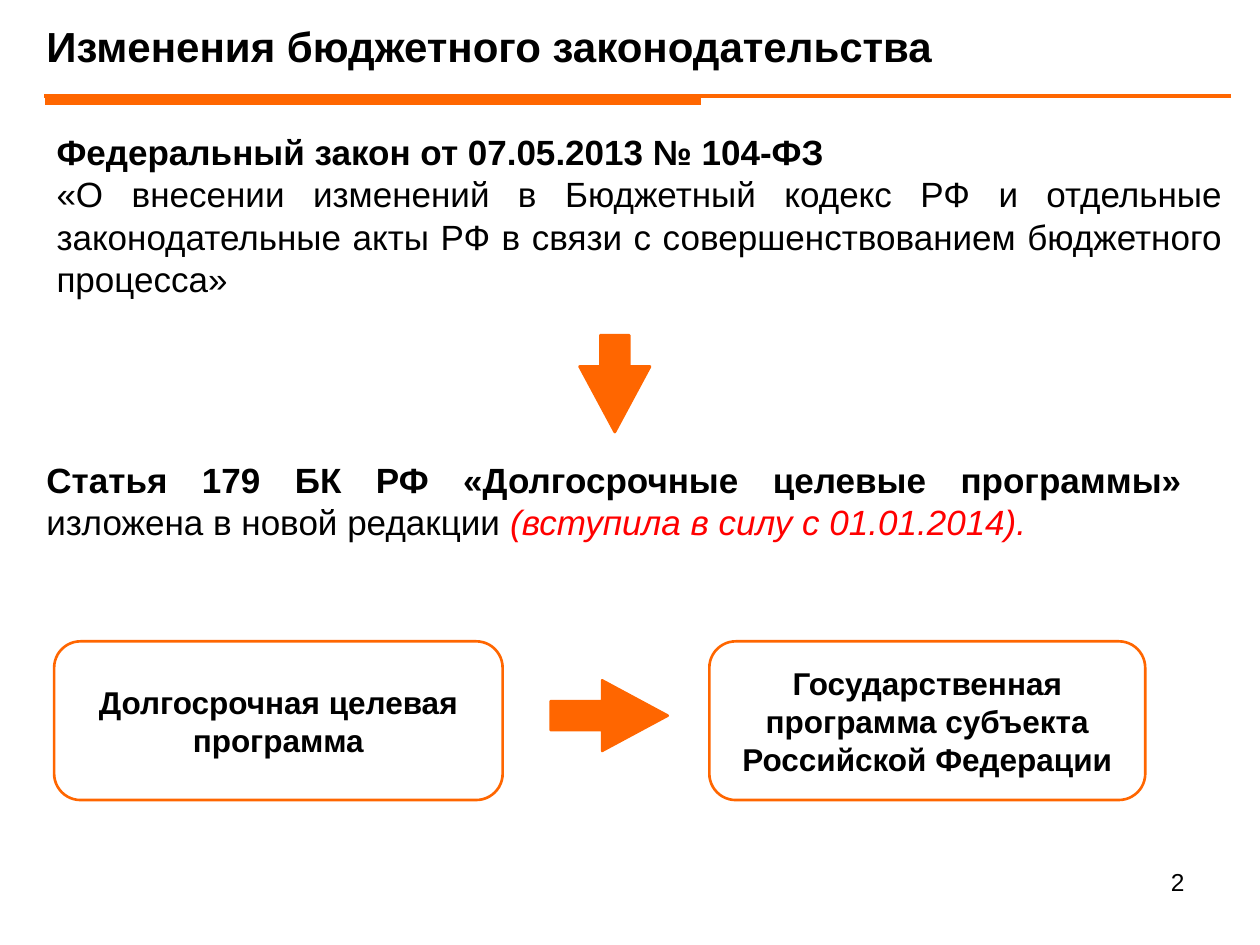
import pptx
import pptx.util
import pptx.dml.color
import pptx.enum.shapes
import pptx.enum.text
import pptx.oxml.ns
from lxml import etree

Inches = pptx.util.Inches
Pt = pptx.util.Pt
SHAPE = pptx.enum.shapes.MSO_SHAPE
ALIGN = pptx.enum.text.PP_ALIGN
ANCHOR = pptx.enum.text.MSO_ANCHOR

ORANGE = pptx.dml.color.RGBColor(0xFF, 0x66, 0x00)
BLACK = pptx.dml.color.RGBColor(0x00, 0x00, 0x00)
RED = pptx.dml.color.RGBColor(0xFF, 0x00, 0x00)

deck = pptx.Presentation()
deck.slide_width, deck.slide_height = Inches(10), Inches(7.5)
slide = deck.slides.add_slide(deck.slide_layouts[6])


def style(paragraph, size, align, bold=False):
    paragraph.alignment = align
    font = paragraph.font
    font.name, font.size, font.bold = "Arial", Pt(size), bold
    font.color.rgb = BLACK


def add_text(left, top, width, height, paragraphs, size, align):
    """Add a wrapping text box from (text, bold) pairs, one per paragraph."""
    frame = slide.shapes.add_textbox(
        Inches(left), Inches(top), Inches(width), Inches(height)).text_frame
    frame.word_wrap = True
    for index, (text, bold) in enumerate(paragraphs):
        paragraph = frame.add_paragraph() if index else frame.paragraphs[0]
        paragraph.text = text
        style(paragraph, size, align, bold)
    return frame


# Heading with its two-weight rule
heading = add_text(0.27, 0.13, 9.45, 0.47,
                   [("Изменения бюджетного законодательства", True)], 24, ALIGN.LEFT)
heading.vertical_anchor = ANCHOR.MIDDLE

for left, right, y, weight in [(0.36, 5.56, 0.79, 6), (0.35, 9.77, 0.76, 2.25)]:
    rule = slide.shapes.add_connector(
        pptx.enum.shapes.MSO_CONNECTOR.STRAIGHT,
        Inches(left), Inches(y), Inches(right), Inches(y))
    rule.line.color.rgb = ORANGE
    rule.line.width = Pt(weight)
    etree.SubElement(rule._element.spPr, pptx.oxml.ns.qn("a:effectLst"))

# Law and the article it changes
add_text(0.35, 0.99, 9.45, 1.45, [
    ("Федеральный закон от 07.05.2013 № 104-ФЗ", True),
    ("«О внесении изменений в Бюджетный кодекс РФ и отдельные законодательные "
     "акты РФ в связи с совершенствованием бюджетного процесса»", False),
], 20, ALIGN.JUSTIFY)

article = add_text(0.27, 3.59, 9.21, 0.77, [("", False)], 20, ALIGN.JUSTIFY).paragraphs[0]
title_run = article.add_run()
title_run.text = "Статья 179 БК РФ «Долгосрочные целевые программы» "
title_run.font.bold = True
article.add_run().text = "изложена в новой редакции "
effective_run = article.add_run()
effective_run.text = "(вступила в силу с 01.01.2014)."
effective_run.font.italic = True
effective_run.font.color.rgb = RED

# Old and new kinds of programme
for left, width, programme in [
    (0.43, 3.56, "Долгосрочная целевая программа"),
    (5.63, 3.46, "Государственная программа субъекта Российской Федерации"),
]:
    box = slide.shapes.add_shape(SHAPE.ROUNDED_RECTANGLE, Inches(left), Inches(5.09),
                                 Inches(width), Inches(1.26))
    box.shadow.inherit = False
    box.fill.background()
    box.line.color.rgb = ORANGE
    box.line.width = Pt(1.5)
    frame = box.text_frame
    frame.word_wrap = True
    frame.vertical_anchor = ANCHOR.MIDDLE
    frame.margin_left = frame.margin_right = frame.margin_top = frame.margin_bottom = 0
    frame.text = programme
    style(frame.paragraphs[0], 18, ALIGN.CENTER, True)

for direction, left, top, width, height in [
    (SHAPE.DOWN_ARROW, 4.6, 2.66, 0.56, 0.77),
    (SHAPE.RIGHT_ARROW, 4.37, 5.4, 0.93, 0.56),
]:
    arrow = slide.shapes.add_shape(direction, Inches(left), Inches(top),
                                   Inches(width), Inches(height))
    arrow.shadow.inherit = False
    arrow.adjustments[0] = 0.41
    arrow.adjustments[1] = 0.93
    arrow.fill.solid()
    arrow.fill.fore_color.rgb = ORANGE
    arrow.line.color.rgb = ORANGE
    arrow.line.width = Pt(1.5)

# Slide number
add_text(7.17, 6.83, 2.33, 0.52, [("2", False)], 14, ALIGN.RIGHT)

deck.save("out.pptx")
